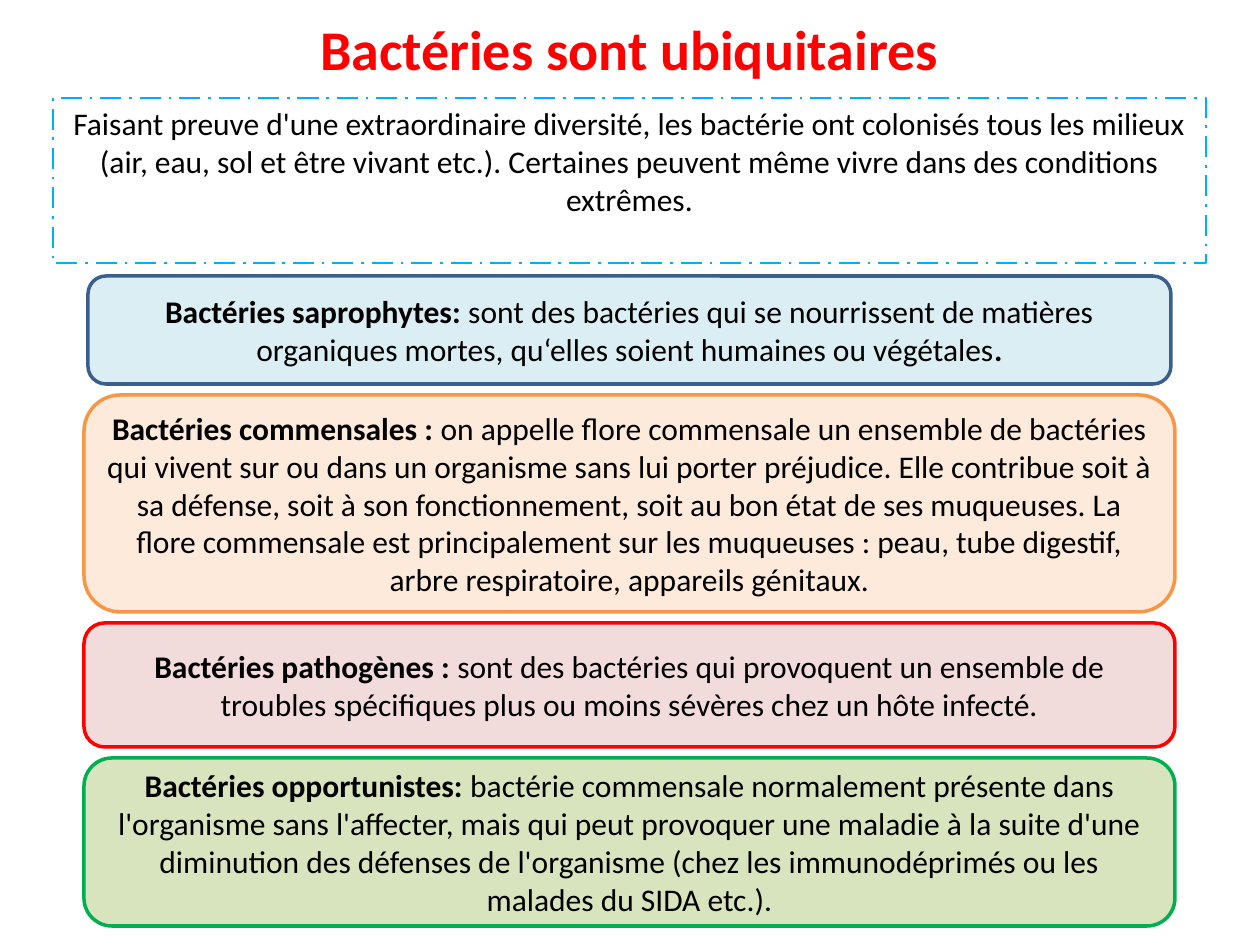
"""Build a slide on the ubiquity of bacteria and their four lifestyles."""
from pptx import Presentation
from pptx.dml.color import RGBColor
from pptx.enum.dml import MSO_LINE
from pptx.enum.shapes import MSO_SHAPE
from pptx.enum.text import MSO_ANCHOR, PP_ALIGN
from pptx.util import Pt

PX = 914400 / 126
ROUNDED = MSO_SHAPE.ROUNDED_RECTANGLE
LONG_DASH_DOT = MSO_LINE.LONG_DASH_DOT
MIDDLE = MSO_ANCHOR.MIDDLE
CENTER = PP_ALIGN.CENTER

BLACK = RGBColor(0x00, 0x00, 0x00)
RED = RGBColor(0xFF, 0x00, 0x00)
SKY = RGBColor(0x00, 0xB0, 0xF0)
NAVY = RGBColor(0x3A, 0x5F, 0x8C)
ORANGE = RGBColor(0xF7, 0x96, 0x46)
GREEN = RGBColor(0x00, 0xB0, 0x50)
PALE_BLUE = RGBColor(0xDB, 0xEE, 0xF4)
PALE_ORANGE = RGBColor(0xFD, 0xEA, 0xDA)
PALE_RED = RGBColor(0xF2, 0xDC, 0xDB)
PALE_GREEN = RGBColor(0xD7, 0xE4, 0xBD)

INTRO = (
    "Faisant preuve d'une extraordinaire diversité, les bactérie ont colonisés "
    "tous les milieux (air, eau, sol et être vivant etc.). Certaines peuvent "
    "même vivre dans des conditions extrêmes."
)
CARDS = [
    ((88, 276, 1083, 108), PALE_BLUE, NAVY, [
        ("Bactéries saprophytes: ", True),
        ("sont des bactéries qui se nourrissent de matières organiques mortes, "
         "qu‘elles soient humaines ou végétales", False),
        (".", True)]),
    ((84, 395, 1091, 217), PALE_ORANGE, ORANGE, [
        ("Bactéries commensales : ", True),
        ("on appelle flore commensale un ensemble de bactéries qui vivent sur ou "
         "dans un organisme sans lui porter préjudice. Elle contribue soit à sa "
         "défense, soit à son fonctionnement, soit au bon état de ses muqueuses. "
         "La flore commensale est principalement sur les muqueuses : peau, tube "
         "digestif, arbre respiratoire, appareils génitaux.", False)]),
    ((84, 623, 1091, 124), PALE_RED, RED, [
        ("Bactéries pathogènes : ", True),
        ("sont des bactéries qui provoquent un ensemble de troubles spécifiques "
         "plus ou moins sévères chez un hôte infecté.", False)]),
    ((84, 758, 1091, 168), PALE_GREEN, GREEN, [
        ("Bactéries opportunistes: ", True),
        ("bactérie commensale normalement présente dans l'organisme sans "
         "l'affecter, mais qui peut provoquer une maladie à la suite d'une "
         "diminution des défenses de l'organisme (chez les immunodéprimés ou les "
         "malades du SIDA etc.).", False)]),
]


def to_emu(*lengths):
    return [round(length * PX) for length in lengths]


def write(shape, runs, size, color):
    paragraph = shape.text_frame.paragraphs[0]
    paragraph.alignment = CENTER
    paragraph.font.name = "Calibri"
    paragraph.font.size = Pt(size)
    paragraph.font.color.rgb = color
    for text, bold in runs:
        run = paragraph.add_run()
        run.text = text
        run.font.bold = bold


presentation = Presentation()
presentation.slide_width, presentation.slide_height = to_emu(1260, 945)
slide = presentation.slides.add_slide(presentation.slide_layouts[6])

title = slide.shapes.add_textbox(*to_emu(305, 8, 649, 81))
title.text_frame.word_wrap = False
write(title, [("Bactéries sont ubiquitaires", True)], 32, RED)

intro = slide.shapes.add_textbox(*to_emu(53, 98, 1153, 165))
intro.text_frame.word_wrap = True
intro.line.color.rgb = SKY
intro.line.width = Pt(1.5)
intro.line.dash_style = LONG_DASH_DOT
write(intro, [(INTRO, False)], 18, BLACK)

for box, fill, outline, runs in CARDS:
    card = slide.shapes.add_shape(ROUNDED, *to_emu(*box))
    card.shadow.inherit = False
    card.fill.solid()
    card.fill.fore_color.rgb = fill
    card.line.color.rgb = outline
    card.line.width = Pt(2)
    card.text_frame.word_wrap = True
    card.text_frame.vertical_anchor = MIDDLE
    write(card, runs, 18, BLACK)

presentation.save("out.pptx")
